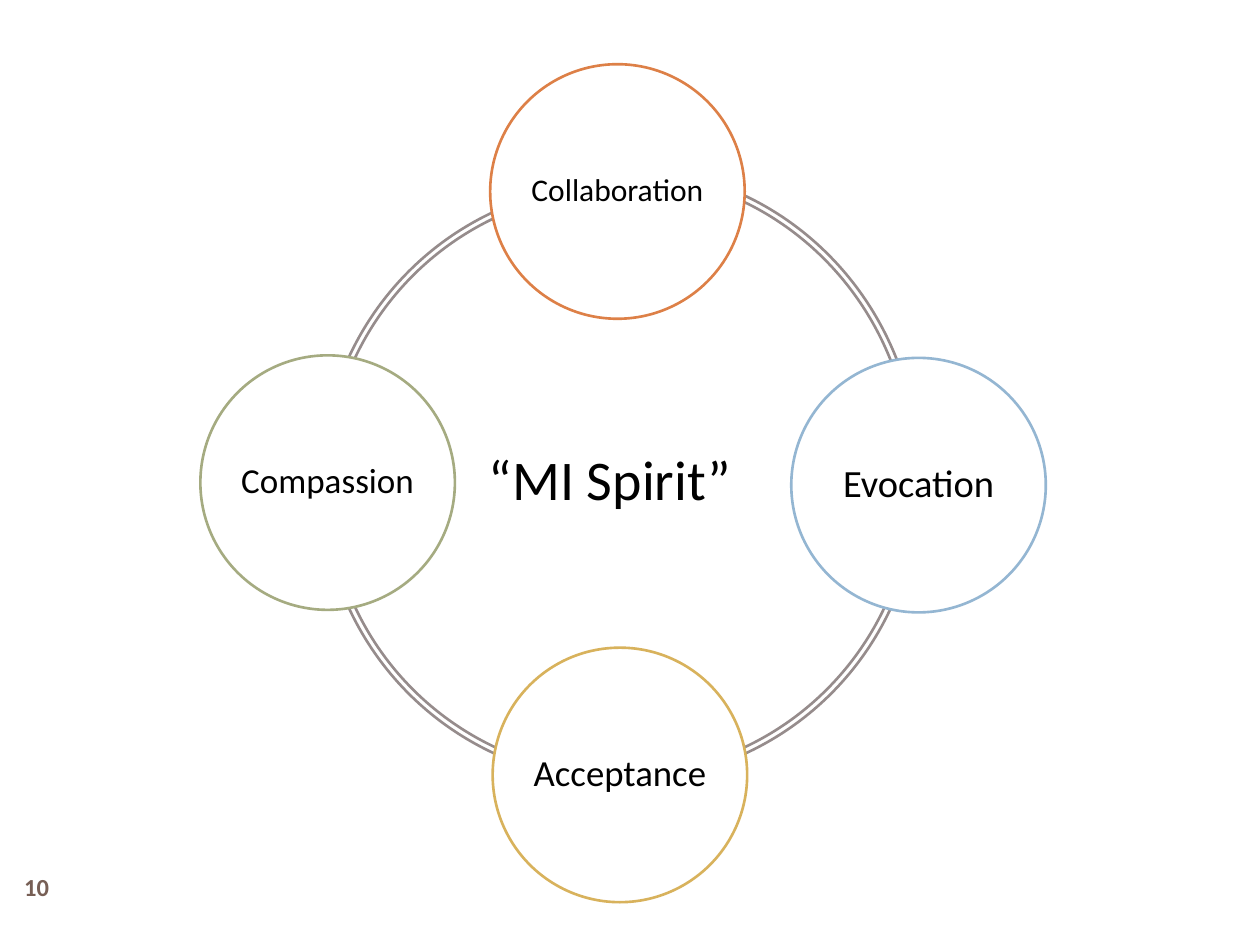
from dataclasses import dataclass

from pptx import Presentation
from pptx.dml.color import RGBColor
from pptx.enum.shapes import MSO_SHAPE
from pptx.enum.text import MSO_ANCHOR, MSO_AUTO_SIZE, PP_ALIGN
from pptx.util import Inches, Pt

ARC, OVAL = MSO_SHAPE.BLOCK_ARC, MSO_SHAPE.OVAL
TOP, MIDDLE = MSO_ANCHOR.TOP, MSO_ANCHOR.MIDDLE
LEFT, CENTER = PP_ALIGN.LEFT, PP_ALIGN.CENTER
FIXED = MSO_AUTO_SIZE.NONE


@dataclass(frozen=True)
class Theme:
    font: str = "Calibri"
    ink: str = "000000"
    paper: str = "FFFFFF"
    ring: str = "968C8C"
    page: str = "775F55"
    orange: str = "DD8047"
    blue: str = "94B6D2"
    gold: str = "D8B25C"
    green: str = "A5AB81"
    title_size: int = 32
    page_size: int = 14
    line: float = 1.5


def write(shape, text, size, color, font, bold=False, align=CENTER,
          anchor=MIDDLE, pad=(0.1, 0.05), spacing=1.0):
    """Put formatted text in a shape; pad is side and top inset in inches."""
    frame = shape.text_frame
    frame.auto_size = FIXED
    frame.word_wrap = True
    frame.vertical_anchor = anchor
    frame.margin_left = frame.margin_right = Inches(pad[0])
    frame.margin_top = frame.margin_bottom = Inches(pad[1])
    para = frame.paragraphs[0]
    para.alignment = align
    para.line_spacing = spacing
    para.space_before = Pt(0)
    run = para.add_run()
    run.text = text
    run.font.name = font
    run.font.size = Pt(size)
    run.font.bold = bold
    run.font.color.rgb = RGBColor.from_string(color)


class Board:
    """Holds the theme and the current slide."""

    def __init__(self, slide, theme):
        self.slide = slide
        self.theme = theme

    def outline(self, kind, box, color):
        shape = self.slide.shapes.add_shape(kind, *map(Inches, box))
        shape.shadow.inherit = False
        shape.fill.solid()
        shape.fill.fore_color.rgb = RGBColor.from_string(self.theme.paper)
        shape.line.color.rgb = RGBColor.from_string(color)
        shape.line.width = Pt(self.theme.line)
        return shape

    def arc(self, box, start, end):
        shape = self.outline(ARC, box, self.theme.ring)
        # Angles are stored in 60000ths of a degree, read here as 100000ths
        shape.adjustments[0] = start * 0.6
        shape.adjustments[1] = end * 0.6
        shape.adjustments[2] = 0.01

    def node(self, text, x, y, side, size, color):
        shape = self.outline(OVAL, (x, y, side, side), color)
        write(shape, text, size, self.theme.ink, self.theme.font,
              pad=(0, 0), spacing=0.9)

    def title(self, text, box):
        shape = self.slide.shapes.title
        shape.left, shape.top, shape.width, shape.height = map(Inches, box)
        write(shape, text, self.theme.title_size, self.theme.ink,
              self.theme.font, align=LEFT, anchor=TOP)

    def number(self, text, box):
        shape = self.slide.shapes.add_textbox(*map(Inches, box))
        write(shape, text, self.theme.page_size, self.theme.page,
              self.theme.font, bold=True)


def main():
    deck = Presentation()
    deck.slide_width, deck.slide_height = Inches(10), Inches(7.5)
    theme = Theme()
    board = Board(deck.slides.add_slide(deck.slide_layouts[5]), theme)

    # Ring: four arcs between neighbouring circles
    ring = (2.55, 1.46, 4.74, 4.74)
    tall = (2.55, 1.33, 4.74, 4.87)
    for box, start, end in (
        (ring, 180, 263.38),
        (ring, 90, 178.6),
        (ring, 1.26, 86.5),
        (tall, 287.54, 356.75),
    ):
        board.arc(box, start, end)

    # Circles, clockwise from the top
    for text, x, y, size, color in (
        ("Collaboration", 3.89, 0.51, 18, theme.orange),
        ("Evocation", 6.28, 2.84, 22, theme.blue),
        ("Acceptance", 3.91, 5.14, 21, theme.gold),
        ("Compassion", 1.59, 2.82, 20, theme.green),
    ):
        board.node(text, x, y, 2.02, size, color)

    # Centre title and page number
    board.title("“MI Spirit”", (3.78, 3.48, 2.27, 0.64))
    board.number("10", (0, 6.83, 0.58, 0.42))

    deck.save("out.pptx")


if __name__ == "__main__":
    main()
